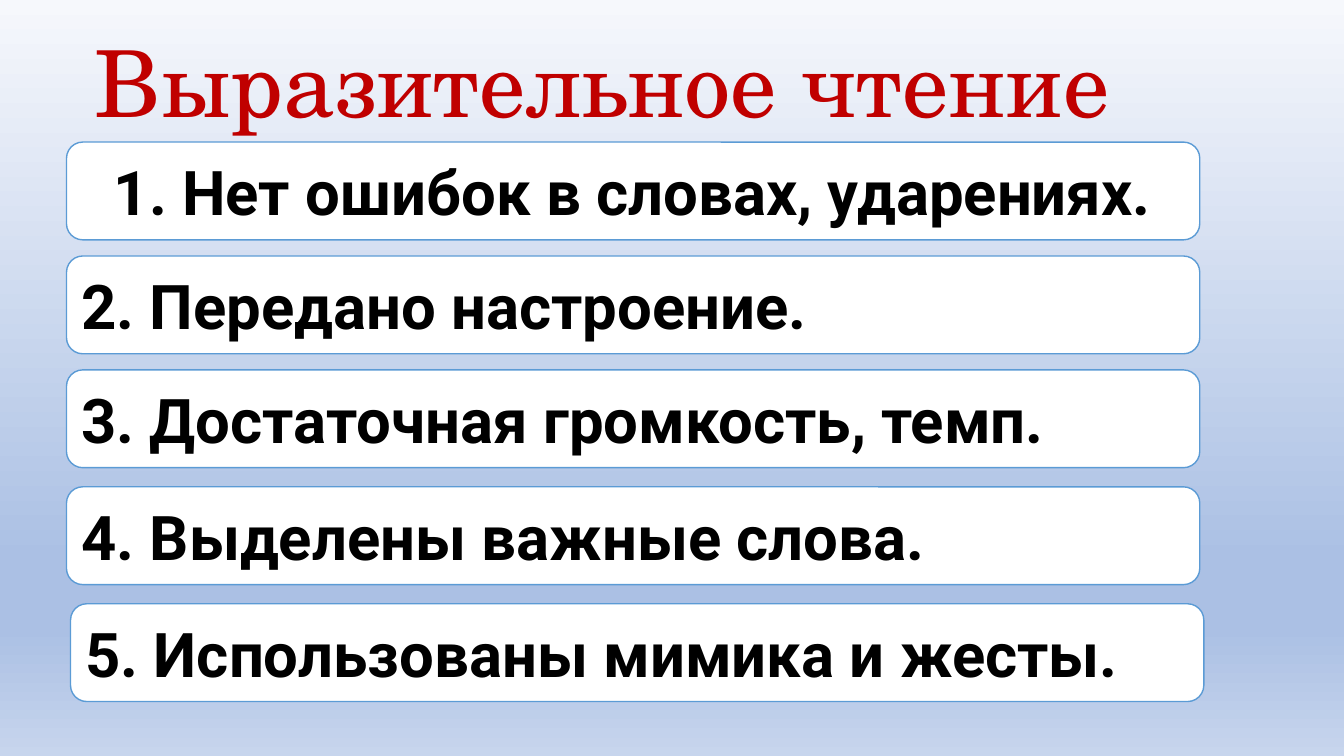
import dataclasses

import lxml.etree
import pptx
import pptx.dml.color
import pptx.enum.shapes
import pptx.enum.text
import pptx.oxml
import pptx.oxml.ns
import pptx.util

PX = 9144  # EMU in one px, 100 px to the inch


@dataclasses.dataclass(frozen=True)
class Theme:
    title_font: str = "TeX Gyre Schola"
    rule_font: str = "Roboto"
    title_size: int = 66
    rule_size: int = 44
    title_color: str = "C00000"
    rule_color: str = "000000"
    card_fill: str = "FFFFFF"
    card_line: str = "5B9BD5"
    # Background stops: percent of the height, colour
    sky: tuple = ((0, "F6F8FC"), (74, "ABC0E4"), (83, "ABC0E4"), (100, "C7D5ED"))


THEME = Theme()
ALIGN = pptx.enum.text.PP_ALIGN

CARD_LEFT, CARD_WIDTH, CARD_HEIGHT = 66, 1124, 97
# Text, left shift, top, alignment
RULES = (
    ("1. Нет ошибок в словах, ударениях.", 0, 141, ALIGN.CENTER),
    ("2. Передано настроение.", 0, 254, ALIGN.LEFT),
    ("3. Достаточная громкость, темп.", 0, 367, ALIGN.LEFT),
    ("4. Выделены важные слова.", 0, 483, ALIGN.LEFT),
    ("5. Использованы мимика и жесты.", 4, 599, ALIGN.LEFT),
)


def color(value):
    return pptx.dml.color.RGBColor.from_string(value)


def emu(box):
    return [length * PX for length in box]


def add_span(para, text, font, size, value, bold=False):
    span = para.add_run()
    span.text = text
    span.font.name = font
    span.font.size = pptx.util.Pt(size)
    span.font.bold = bold
    span.font.color.rgb = color(value)
    return span


def outline_span(span, value):
    """Draw a thin line round the letters."""
    line = pptx.oxml.parse_xml(
        f'<a:ln {pptx.oxml.ns.nsdecls("a")} w="{pptx.util.Pt(0.75)}">'
        f'<a:solidFill><a:srgbClr val="{value}"/></a:solidFill></a:ln>'
    )
    span.font._element.insert(0, line)


def paint_background(page):
    fill = page.background.fill
    fill.gradient()
    fill.gradient_angle = 270
    stops = page.element.xpath(".//p:bg//a:gsLst")[0]
    for stop in list(stops):
        stops.remove(stop)
    for percent, value in THEME.sky:
        stop = lxml.etree.SubElement(
            stops, pptx.oxml.ns.qn("a:gs"), pos=str(percent * 1000)
        )
        lxml.etree.SubElement(stop, pptx.oxml.ns.qn("a:srgbClr"), val=value)


def add_title(page, box, text):
    frame = page.shapes.add_textbox(*emu(box)).text_frame
    frame.word_wrap = True
    frame.auto_size = pptx.enum.text.MSO_AUTO_SIZE.SHAPE_TO_FIT_TEXT
    add_span(frame.paragraphs[0], text, THEME.title_font,
             THEME.title_size, THEME.title_color)


def add_rule_card(page, box, text, align):
    card = page.shapes.add_shape(
        pptx.enum.shapes.MSO_SHAPE.ROUNDED_RECTANGLE, *emu(box)
    )
    card.shadow.inherit = False
    card.fill.solid()
    card.fill.fore_color.rgb = color(THEME.card_fill)
    card.line.color.rgb = color(THEME.card_line)
    card.line.width = pptx.util.Pt(1)
    frame = card.text_frame
    frame.word_wrap = True
    frame.vertical_anchor = pptx.enum.text.MSO_ANCHOR.MIDDLE
    para = frame.paragraphs[0]
    para.alignment = align
    span = add_span(para, text, THEME.rule_font, THEME.rule_size,
                    THEME.rule_color, bold=True)
    outline_span(span, THEME.rule_color)


def build_reading_page(deck):
    page = deck.slides.add_slide(deck.slide_layouts[6])
    paint_background(page)

    # Heading
    add_title(page, (84, 20, 1213, 121), "Выразительное чтение")

    # Reading rules
    for text, shift, top, align in RULES:
        box = (CARD_LEFT + shift, top, CARD_WIDTH, CARD_HEIGHT)
        add_rule_card(page, box, text, align)


def main():
    deck = pptx.Presentation()
    deck.slide_width, deck.slide_height = emu((1333, 750))
    build_reading_page(deck)
    deck.save("out.pptx")


if __name__ == "__main__":
    main()
